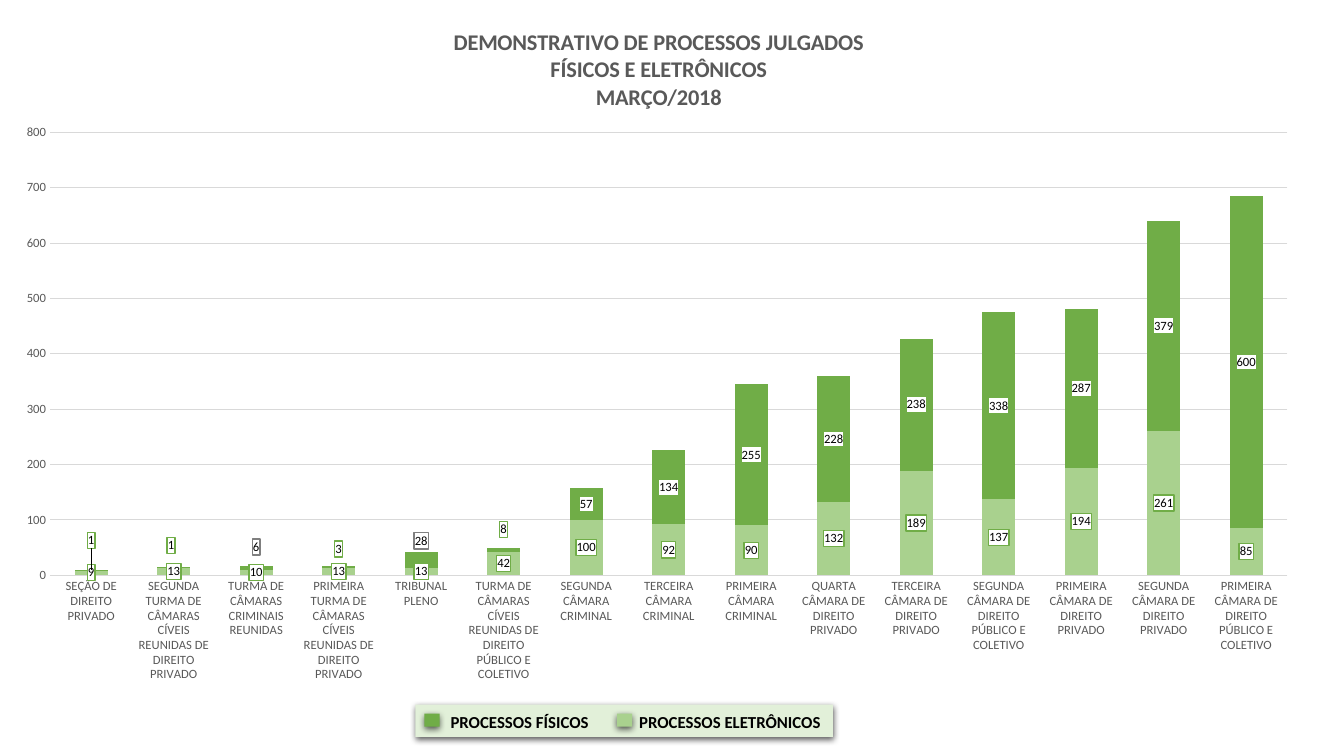
from dataclasses import dataclass, field
from lxml.etree import _Element as Element
from pptx import Presentation
from pptx.chart.chart import Chart
from pptx.chart.data import CategoryChartData
from pptx.dml.color import RGBColor
from pptx.enum.chart import XL_CHART_TYPE as ChartType, XL_TICK_MARK as TickMark
from pptx.enum.shapes import MSO_SHAPE as Preset
from pptx.enum.text import MSO_AUTO_SIZE as AutoSize, PP_ALIGN as Align
from pptx.oxml import parse_xml
from pptx.oxml.ns import nsdecls, qn
from pptx.slide import Slide
from pptx.text.text import Font
from pptx.util import Inches, Pt


@dataclass(frozen=True)
class Theme:
    font: str = "Calibri"
    dark_green: str = "70AD47"
    light_green: str = "A9D18E"
    legend_fill: str = "E2F0D9"
    gray: str = "595959"
    label_gray: str = "7F7F7F"
    grid: str = "D9D9D9"
    white: str = "FFFFFF"
    black: str = "000000"
    title_size: int = 16
    legend_size: int = 12
    chart_size: int = 10
    label_size: int = 9


@dataclass(frozen=True)
class RaisedLabel:
    point: int
    rise: float
    border: str
    shift: float = 0


@dataclass(frozen=True)
class ProcessSeries:
    name: str
    color: str
    values: tuple[int, ...]
    raised: tuple[RaisedLabel, ...] = field(default=())


@dataclass(frozen=True)
class LegendEntry:
    name: str
    color: str
    swatch_left: float
    text_left: float
    text_width: float


THEME = Theme()
TITLE = ("DEMONSTRATIVO DE PROCESSOS JULGADOS", "FÍSICOS E ELETRÔNICOS", "MARÇO/2018")
PHYSICAL, ELECTRONIC = "PROCESSOS FÍSICOS", "PROCESSOS ELETRÔNICOS"
CHAMBERS = (
    "SEÇÃO DE DIREITO PRIVADO",
    "SEGUNDA TURMA DE CÂMARAS CÍVEIS REUNIDAS DE DIREITO PRIVADO",
    "TURMA DE CÂMARAS CRIMINAIS REUNIDAS",
    "PRIMEIRA TURMA DE CÂMARAS CÍVEIS REUNIDAS DE DIREITO PRIVADO",
    "TRIBUNAL PLENO",
    "TURMA DE CÂMARAS CÍVEIS REUNIDAS DE DIREITO PÚBLICO E COLETIVO",
    "SEGUNDA CÂMARA CRIMINAL",
    "TERCEIRA CÂMARA CRIMINAL",
    "PRIMEIRA CÂMARA CRIMINAL",
    "QUARTA CÂMARA DE DIREITO PRIVADO",
    "TERCEIRA CÂMARA DE DIREITO PRIVADO",
    "SEGUNDA CÂMARA DE DIREITO PÚBLICO E COLETIVO",
    "PRIMEIRA CÂMARA DE DIREITO PRIVADO",
    "SEGUNDA CÂMARA DE DIREITO PRIVADO",
    "PRIMEIRA CÂMARA DE DIREITO PÚBLICO E COLETIVO",
)
PROCESSES = (
    ProcessSeries(ELECTRONIC, THEME.light_green,
                  (9, 13, 10, 13, 13, 42, 100, 92, 90, 132, 189, 137, 194, 261, 85)),
    ProcessSeries(PHYSICAL, THEME.dark_green,
                  (1, 1, 6, 3, 28, 8, 57, 134, 255, 228, 238, 338, 287, 379, 600),
                  (RaisedLabel(0, 0.042, THEME.dark_green),
                   RaisedLabel(1, 0.032, THEME.dark_green, -0.002),
                   RaisedLabel(2, 0.03, THEME.label_gray),
                   RaisedLabel(3, 0.026, THEME.dark_green),
                   RaisedLabel(4, 0.028, THEME.label_gray),
                   RaisedLabel(5, 0.029, THEME.dark_green))),
)
LEGEND = (
    LegendEntry(PHYSICAL, THEME.dark_green, 4.21, 4.37, 1.59),
    LegendEntry(ELECTRONIC, THEME.light_green, 6.12, 6.24, 2.02),
)


def style_font(font: Font, size: int, color: str, bold: bool = False) -> None:
    font.name, font.size, font.bold = THEME.font, Pt(size), bold
    font.color.rgb = RGBColor.from_string(color)


def manual_layout(modes: str = "", **fractions: float) -> Element:
    items = "".join(f'<c:{key} val="{value}"/>' for key, value in fractions.items())
    return parse_xml(f'<c:layout {nsdecls("c")}><c:manualLayout>{modes}{items}'
                     '</c:manualLayout></c:layout>')


def remove_layout(parent: Element) -> None:
    for layout in parent.findall(qn("c:layout")):
        parent.remove(layout)


def label_box(border: str) -> Element:
    return parse_xml(f'<c:spPr {nsdecls("c", "a")}><a:solidFill><a:srgbClr val="{THEME.white}"/>'
                     f'</a:solidFill><a:ln w="{Pt(1)}"><a:solidFill><a:srgbClr val="{border}"/>'
                     '</a:solidFill></a:ln></c:spPr>')


def style_series(chart: Chart, index: int, process: ProcessSeries) -> None:
    series = chart.plots[0].series[index]
    series.format.fill.solid()
    series.format.fill.fore_color.rgb = RGBColor.from_string(process.color)
    labels = series.data_labels
    labels.show_value = True
    style_font(labels.font, THEME.label_size, THEME.black)
    labels._element.find(qn("c:txPr")).addprevious(label_box(THEME.dark_green))
    for raised in process.raised:
        label = series.points[raised.point].data_label
        style_font(label.font, THEME.label_size, THEME.black)
        text = labels._element.findall(qn("c:dLbl"))[-1].find(qn("c:txPr"))
        text.addprevious(manual_layout(x=raised.shift, y=-raised.rise))
        text.addprevious(label_box(raised.border))


def add_title(chart: Chart) -> None:
    chart.has_title = True
    frame = chart.chart_title.text_frame
    for number, line in enumerate(TITLE):
        paragraph = frame.add_paragraph() if number else frame.paragraphs[0]
        paragraph.alignment = Align.CENTER
        run = paragraph.add_run()
        run.text = line
        style_font(run.font, THEME.title_size, THEME.gray, True)
    title = chart.chart_title._element
    remove_layout(title)
    edges = '<c:xMode val="edge"/><c:yMode val="edge"/>'
    title.find(qn("c:tx")).addnext(manual_layout(edges, x=0.343, y=0.035))


def style_axes(chart: Chart) -> None:
    chambers, totals = chart.category_axis, chart.value_axis
    for axis in (chambers, totals):
        axis.major_tick_mark = axis.minor_tick_mark = TickMark.NONE
        style_font(axis.tick_labels.font, THEME.label_size, THEME.gray)
    chambers._element.find(qn("c:txPr")).find(qn("a:bodyPr")).set("rot", "0")
    totals.minimum_scale, totals.maximum_scale, totals.major_unit = 0, 800, 100
    totals.tick_labels.number_format = "#,##0"
    totals.tick_labels.number_format_is_linked = False
    totals.format.line.fill.background()
    totals.has_major_gridlines = True
    for line, width in ((chambers.format.line, 1), (totals.major_gridlines.format.line, 0.75)):
        line.color.rgb = RGBColor.from_string(THEME.grid)
        line.width = Pt(width)


def add_process_chart(slide: Slide) -> None:
    data = CategoryChartData(number_format="General")
    data.categories = CHAMBERS
    for process in PROCESSES:
        data.add_series(process.name, process.values)
    chart = slide.shapes.add_chart(ChartType.COLUMN_STACKED, Inches(0), Inches(0),
                                   Inches(13.03), Inches(6.91), data).chart
    style_font(chart.font, THEME.chart_size, THEME.black)
    chart.has_legend = False
    plot = chart.plots[0]
    plot.gap_width, plot.overlap, plot.vary_by_categories = 150, 100, False
    add_title(chart)
    style_axes(chart)
    for index, process in enumerate(PROCESSES):
        style_series(chart, index, process)
    area = chart._chartSpace.find(qn("c:chart")).find(qn("c:plotArea"))
    remove_layout(area)
    modes = '<c:layoutTarget val="inner"/><c:xMode val="edge"/><c:yMode val="edge"/>'
    area.insert(0, manual_layout(modes, x=0.038, y=0.19, w=0.942, h=0.636))


def add_block(slide: Slide, left: float, top: float, width: float, height: float,
              color: str) -> None:
    block = slide.shapes.add_shape(Preset.RECTANGLE, Inches(left), Inches(top),
                                   Inches(width), Inches(height))
    block.fill.solid()
    block.fill.fore_color.rgb = RGBColor.from_string(color)
    block.line.fill.background()
    block._element.spPr.append(parse_xml(
        f'<a:effectLst {nsdecls("a")}><a:outerShdw blurRad="{Pt(4.5)}" dist="{Pt(1.5)}" '
        f'dir="5400000" algn="ctr" rotWithShape="0"><a:srgbClr val="{THEME.black}">'
        '<a:alpha val="63000"/></a:srgbClr></a:outerShdw></a:effectLst>'))


def add_legend(slide: Slide) -> None:
    add_block(slide, 4.12, 6.99, 4.14, 0.32, THEME.legend_fill)
    for entry in LEGEND:
        add_block(slide, entry.swatch_left, 7.08, 0.15, 0.13, entry.color)
        caption = slide.shapes.add_textbox(Inches(entry.text_left), Inches(7.01),
                                           Inches(entry.text_width), Inches(0.3)).text_frame
        caption.word_wrap = False
        caption.auto_size = AutoSize.SHAPE_TO_FIT_TEXT
        run = caption.paragraphs[0].add_run()
        run.text = entry.name
        style_font(run.font, THEME.legend_size, THEME.black, True)


def main() -> None:
    deck = Presentation()
    deck.slide_width, deck.slide_height = Inches(13.33), Inches(7.5)
    slide = deck.slides.add_slide(deck.slide_layouts[6])
    add_legend(slide)
    add_process_chart(slide)
    deck.save("out.pptx")


if __name__ == "__main__":
    main()
